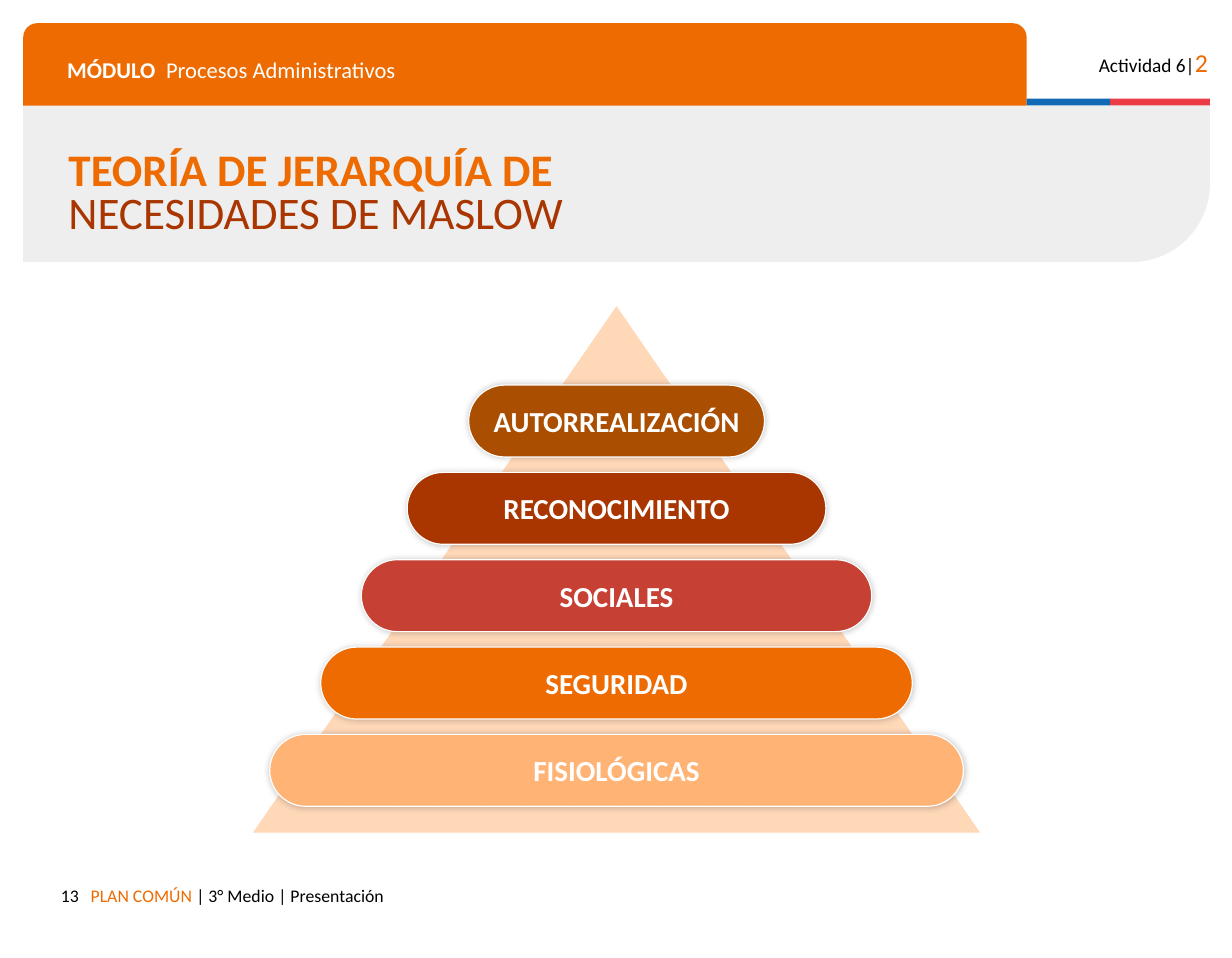
from dataclasses import dataclass

from lxml import etree
from pptx import Presentation
from pptx.dml.color import RGBColor
from pptx.enum.shapes import MSO_SHAPE
from pptx.enum.text import MSO_ANCHOR, MSO_AUTO_SIZE, PP_ALIGN
from pptx.oxml.ns import qn
from pptx.shapes.autoshape import Shape
from pptx.slide import Slide
from pptx.util import Inches, Pt

RECTANGLE = MSO_SHAPE.RECTANGLE
ROUND_ONE = MSO_SHAPE.ROUND_1_RECTANGLE
ROUND_TOP = MSO_SHAPE.ROUND_2_SAME_RECTANGLE
PILL = MSO_SHAPE.ROUNDED_RECTANGLE
TRIANGLE = MSO_SHAPE.ISOSCELES_TRIANGLE
LEFT, CENTER, RIGHT = PP_ALIGN.LEFT, PP_ALIGN.CENTER, PP_ALIGN.RIGHT
TOP, MIDDLE = MSO_ANCHOR.TOP, MSO_ANCHOR.MIDDLE
NO_FIT = MSO_AUTO_SIZE.NONE

BLACK = RGBColor(0x00, 0x00, 0x00)
WHITE = RGBColor(0xFF, 0xFF, 0xFF)
GREY = RGBColor(0xEE, 0xEE, 0xEE)
ORANGE = RGBColor(0xED, 0x6B, 0x00)
PEACH = RGBColor(0xFF, 0xB3, 0x75)
BRICK = RGBColor(0xC6, 0x40, 0x33)
RUST = RGBColor(0xA9, 0x35, 0x01)
BROWN = RGBColor(0xAA, 0x4E, 0x02)
BLUE = RGBColor(0x0F, 0x69, 0xB4)
RED = RGBColor(0xEB, 0x3C, 0x46)

FONT = "Calibri"
CELL = Inches(0.1)  # side of one grid column and row
COLUMNS, ROWS = 106.2, 82.6
MARGIN = 1  # text inset, in cells

PYRAMID_CENTER = 53.15
PILL_TOP, PILL_PITCH, PILL_HEIGHT = 33.2, 7.53, 6.2


@dataclass(frozen=True)
class Area:
    """A rectangle in grid columns and rows."""
    column: float
    row: float
    columns: float
    rows: float

    def lengths(self) -> tuple[int, ...]:
        return tuple(round(cells * CELL) for cells in
                     (self.column, self.row, self.columns, self.rows))


@dataclass(frozen=True)
class Span:
    text: str
    size: int
    color: RGBColor
    bold: bool = False


@dataclass(frozen=True)
class Panel:
    kind: MSO_SHAPE
    area: Area
    color: RGBColor
    corners: tuple[float, ...] = ()
    flipped: bool = False


@dataclass(frozen=True)
class Label:
    area: Area
    spans: tuple[Span, ...]
    align: PP_ALIGN = LEFT
    tab: float = 0


@dataclass(frozen=True)
class Level:
    name: str
    columns: float
    color: RGBColor


PANELS = (
    Panel(ROUND_ONE, Area(2, 9.1, 102.3, 13.5), GREY, (0.5,), flipped=True),
    Panel(ROUND_TOP, Area(2, 2, 86.5, 7.1), ORANGE, (0.17, 0)),
    Panel(RECTANGLE, Area(88.5, 8.5, 7.2, 0.6), BLUE),
    Panel(RECTANGLE, Area(95.7, 8.5, 8.6, 0.6), RED),
)

LABELS = (
    Label(Area(92.3, 3, 12.8, 4.3),
          (Span("Actividad 6|", 12, BLACK), Span("2", 16, ORANGE)), RIGHT),
    Label(Area(4.8, 3.8, 81.4, 4.1),
          (Span("MÓDULO", 14, WHITE, True),
           Span("\tProcesos Administrativos", 14, WHITE)), tab=8.53),
    Label(Area(6.83, 75.3, 70, 3.5),
          (Span("PLAN COMÚN ", 11, ORANGE),
           Span("| 3° Medio | Presentación", 11, BLACK))),
    Label(Area(4.1, 75.3, 3.7, 3.5), (Span("13", 11, BLACK),), RIGHT),
)

TITLE = Label(Area(4.9, 11.9, 61.7, 9.8),
              (Span("TEORÍA DE JERARQUÍA DE ", 28, ORANGE, True),
               Span("NECESIDADES DE MASLOW", 28, RUST)))

LEVELS = (
    Level("AUTORREALIZACIÓN", 25.5, BROWN),
    Level("RECONOCIMIENTO", 36.1, RUST),
    Level("SOCIALES", 44, BRICK),
    Level("SEGURIDAD", 51, ORANGE),
    Level("FISIOLÓGICAS", 59.8, PEACH),
)


def write(box: Shape, spans: tuple[Span, ...], align: PP_ALIGN,
          anchor: MSO_ANCHOR = TOP, margin: float = MARGIN, tab: float = 0) -> None:
    frame = box.text_frame
    inset = round(margin * CELL)
    frame_format = {"word_wrap": True, "auto_size": NO_FIT, "vertical_anchor": anchor,
                    "margin_left": inset, "margin_right": inset,
                    "margin_top": inset, "margin_bottom": inset}
    for name, value in frame_format.items():
        setattr(frame, name, value)
    para = frame.paragraphs[0]
    para.alignment = align
    if tab:
        stops = etree.SubElement(para._p.get_or_add_pPr(), qn("a:tabLst"))
        etree.SubElement(stops, qn("a:tab"), pos=str(round(tab * CELL)), algn="l")
    for span in spans:
        run = para.add_run()
        run.text = span.text
        font_format = {"name": FONT, "size": Pt(span.size), "bold": span.bold}
        for name, value in font_format.items():
            setattr(run.font, name, value)
        run.font.color.rgb = span.color


def draw_panel(page: Slide, panel: Panel) -> Shape:
    shape = page.shapes.add_shape(panel.kind, *panel.area.lengths())
    shape.shadow.inherit = False
    shape.fill.solid()
    shape.fill.fore_color.rgb = panel.color
    shape.line.fill.background()
    for index, corner in enumerate(panel.corners):
        shape.adjustments[index] = corner
    if panel.flipped:
        shape.element.spPr.find(qn("a:xfrm")).set("flipV", "1")
    return shape


def draw_label(page: Slide, label: Label) -> None:
    box = page.shapes.add_textbox(*label.area.lengths())
    write(box, label.spans, label.align, tab=label.tab)


def draw_title(page: Slide) -> None:
    title = page.shapes.title
    title.element.getparent().append(title.element)  # in front of the panels
    title.left, title.top, title.width, title.height = TITLE.area.lengths()
    write(title, TITLE.spans, TITLE.align, MIDDLE)
    title.text_frame.paragraphs[0].line_spacing = 0.8


def add_glow_shadow(shape: Shape) -> None:
    """Give the shape a soft black shadow with no offset."""
    effects = shape.element.spPr.find(qn("a:effectLst"))
    shadow = etree.SubElement(effects, qn("a:outerShdw"), blurRad=str(Pt(4)),
                              dist="0", dir="0", rotWithShape="0")
    color = etree.SubElement(shadow, qn("a:srgbClr"), val=str(BLACK))
    etree.SubElement(color, qn("a:alpha"), val="22000")


def draw_pyramid(page: Slide) -> None:
    backdrop = draw_panel(page, Panel(TRIANGLE, Area(21.8, 26.4, 62.7, 45.4), PEACH))
    color = backdrop.element.spPr.find(qn("a:solidFill"))[0]
    etree.SubElement(color, qn("a:alpha"), val="51000")
    for index, level in enumerate(LEVELS):
        area = Area(PYRAMID_CENTER - level.columns / 2, PILL_TOP + index * PILL_PITCH,
                    level.columns, PILL_HEIGHT)
        pill = draw_panel(page, Panel(PILL, area, level.color, (0.5,)))
        pill.line.color.rgb = WHITE
        pill.line.width = Pt(0.75)
        add_glow_shadow(pill)
        write(pill, (Span(level.name, 18, WHITE, True),), CENTER, MIDDLE, MARGIN / 2)


def main() -> None:
    deck = Presentation()
    deck.slide_width = round(COLUMNS * CELL)
    deck.slide_height = round(ROWS * CELL)
    page = deck.slides.add_slide(deck.slide_layouts[5])
    for panel in PANELS:
        draw_panel(page, panel)
    for label in LABELS:
        draw_label(page, label)
    draw_title(page)
    draw_pyramid(page)
    deck.save("out.pptx")


if __name__ == "__main__":
    main()
